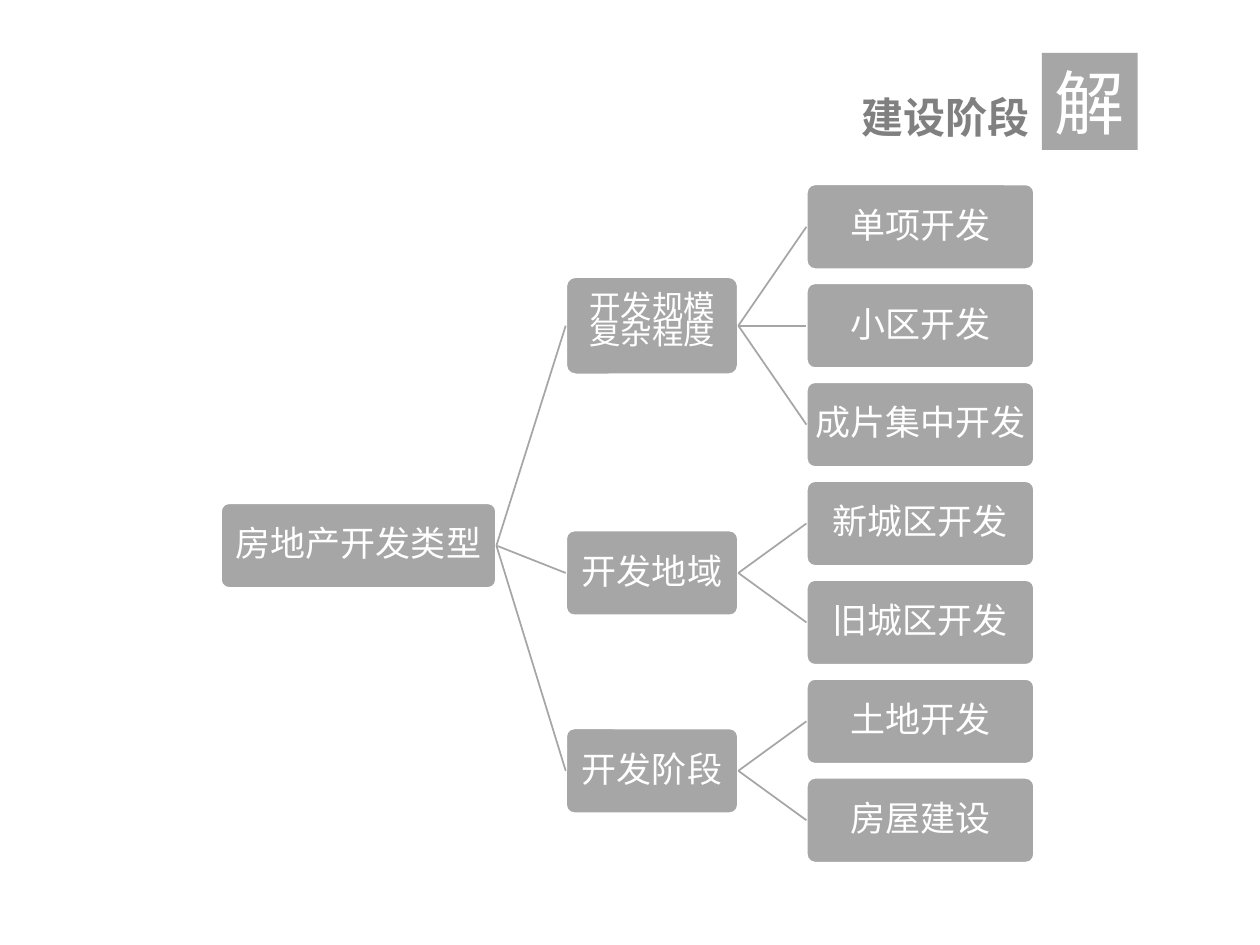
import pptx
import pptx.util
import pptx.dml.color
import pptx.enum.shapes
import pptx.enum.text
import pptx.oxml.ns
from lxml import etree

Inches, Pt = pptx.util.Inches, pptx.util.Pt
RGB = pptx.dml.color.RGBColor
Shape = pptx.enum.shapes.MSO_SHAPE
Line = pptx.enum.shapes.MSO_CONNECTOR
Align = pptx.enum.text.PP_ALIGN
Anchor = pptx.enum.text.MSO_ANCHOR
qn = pptx.oxml.ns.qn

GREY = RGB(0xA6, 0xA6, 0xA6)
DARK = RGB(0x80, 0x80, 0x80)
WHITE = RGB(0xFF, 0xFF, 0xFF)
SANS = "Noto Sans CJK SC"

TITLE, MARK = "建设阶段", "解"
ROOT = "房地产开发类型"
TREE = [
    (["开发规模", "复杂程度"], ["单项开发", "小区开发", "成片集中开发"]),
    (["开发地域"], ["新城区开发", "旧城区开发"]),
    (["开发阶段"], ["土地开发", "房屋建设"]),
]

# Left and width of each level
TRUNK, LIMB, LEAF = (1.75, 2.19), (4.49, 1.37), (6.4, 1.81)
HIGH, TALL = 0.68, 0.78
FIRST, LAST = 1.8, 6.51  # centres of the outer leaves
ROOT_Y = 4.33

deck = pptx.Presentation()
deck.slide_width, deck.slide_height = Inches(10), Inches(7.5)
slide = deck.slides.add_slide(deck.slide_layouts[6])
shapes = slide.shapes


def write(frame, lines, font, align, space=None):
    """Fill a text frame with one paragraph per line."""
    for i, text in enumerate(lines):
        para = frame.paragraphs[0] if i == 0 else frame.add_paragraph()
        para.alignment = align
        if space:
            para.line_spacing, para.space_after = space, Pt(4)
        run = para.add_run()
        run.text = text
        for key, value in font.items():
            if key == "color":
                run.font.color.rgb = value
            else:
                setattr(run.font, key, value)
        east = etree.SubElement(run.font._element, qn("a:ea"))
        east.set("typeface", font["name"])


def node(lines, level, mid):
    """Draw a tree box centred on the height mid."""
    left, width = level
    many = len(lines) > 1
    high = TALL if many else HIGH
    box = shapes.add_shape(Shape.ROUNDED_RECTANGLE, Inches(left),
                           Inches(mid - high / 2), Inches(width), Inches(high))
    box.adjustments[0] = 0.1
    box.shadow.inherit = False
    box.fill.solid()
    box.fill.fore_color.rgb = GREY
    box.line.color.rgb = WHITE
    box.line.width = Pt(1.5)
    frame = box.text_frame
    frame.word_wrap = True
    frame.vertical_anchor = Anchor.MIDDLE
    for side in ("left", "top", "right", "bottom"):
        setattr(frame, "margin_" + side, Inches(0.03))
    font = {"name": SANS, "size": Pt(18 if many else 20), "color": WHITE}
    write(frame, lines, font, Align.CENTER, 0.5 if many else 0.9)
    return box


def link(start, end):
    line = shapes.add_connector(Line.STRAIGHT, 0, 0, 0, 0)
    line.begin_connect(start, 3)
    line.end_connect(end, 1)
    line.line.color.rgb = GREY
    line.line.width = Pt(1)
    etree.SubElement(line._element.spPr, qn("a:effectLst"))


head = shapes.add_textbox(Inches(4.32), Inches(0.68), Inches(3.95), Inches(0.5))
head.text_frame.word_wrap = True
write(head.text_frame, [TITLE],
      {"name": SANS, "size": Pt(24), "bold": True, "color": DARK}, Align.RIGHT)

mark = shapes.add_shape(Shape.RECTANGLE, Inches(8.27), Inches(0.42),
                        Inches(0.76), Inches(0.77))
mark.shadow.inherit = False
mark.fill.solid()
mark.fill.fore_color.rgb = GREY
mark.line.fill.background()
mark.text_frame.word_wrap = False
mark.text_frame.vertical_anchor = Anchor.TOP
write(mark.text_frame, [MARK],
      {"name": "Arial", "size": Pt(40), "color": WHITE}, Align.LEFT)

root = node([ROOT], TRUNK, ROOT_Y)
step = (LAST - FIRST) / (sum(len(leaves) for _, leaves in TREE) - 1)
row = 0
for lines, leaves in TREE:
    mids = [FIRST + step * (row + i) for i in range(len(leaves))]
    row += len(leaves)
    limb = node(lines, LIMB, sum(mids) / len(mids))
    link(root, limb)
    for text, mid in zip(leaves, mids):
        link(limb, node([text], LEAF, mid))

deck.save("out.pptx")
